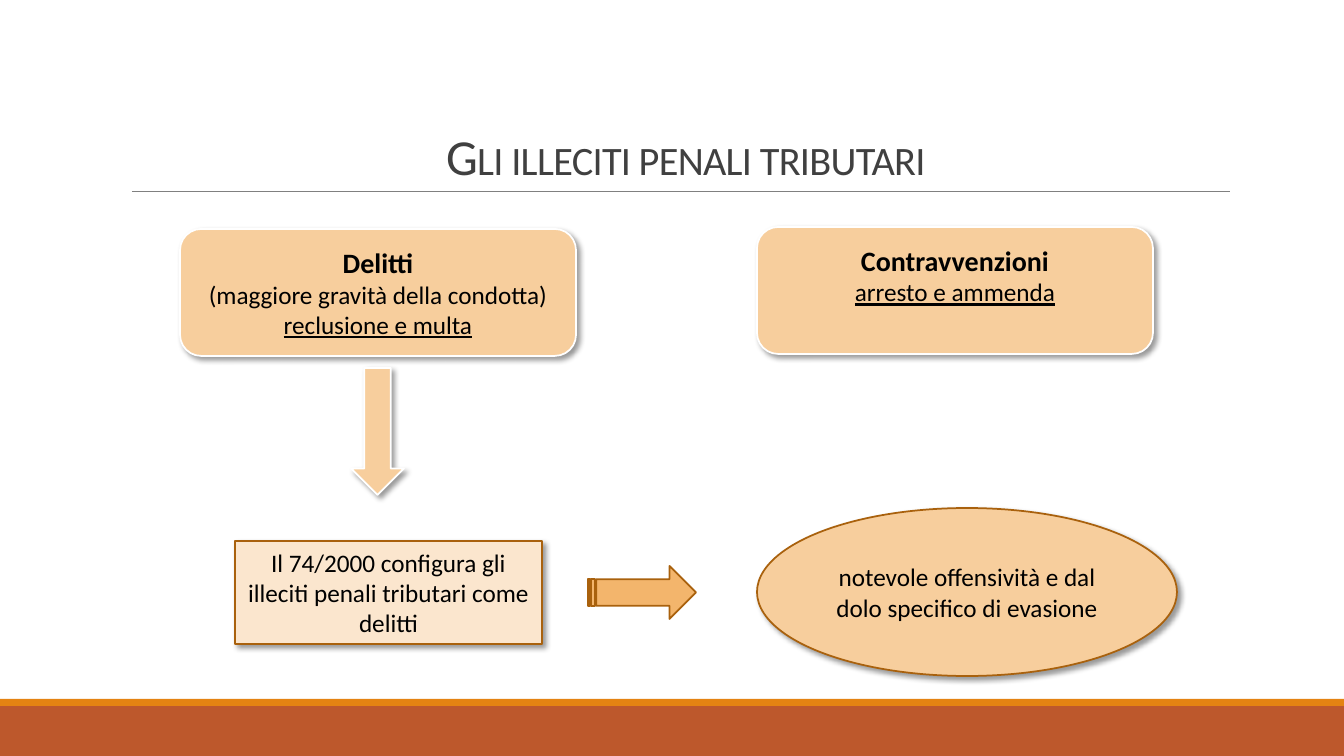
from lxml import etree
from pptx import Presentation
from pptx.dml.color import RGBColor
from pptx.enum import shapes as kinds, text as txt
from pptx.oxml.ns import qn
from pptx.util import Pt

PX = 12192000 / 1344
FONT = "Calibri"
COL = {
    "rust": "BD582C", "orange": "E48312", "rule": "808080", "title": "404040",
    "peach": "F7CE9D", "cream": "FBE6CE", "amber": "F3B56C",
    "brown": "A9610D", "white": "FFFFFF", "black": "000000",
}
GEO = kinds.MSO_SHAPE


def px(n):
    return round(n * PX)


def rgb(name):
    return RGBColor.from_string(COL[name])


def shade(shape):
    """Add a soft shadow at the lower right."""
    fx = shape._element.spPr.find(qn("a:effectLst"))
    drop = etree.SubElement(fx, qn("a:outerShdw"), blurRad=str(Pt(4)),
                            dist=str(Pt(3)), dir="2700000", rotWithShape="0")
    tone = etree.SubElement(drop, qn("a:srgbClr"), val=COL["black"])
    etree.SubElement(tone, qn("a:alpha"), val="40000")


def draw(slide, geo, box, fill, edge=None, shadow=True):
    shape = slide.shapes.add_shape(geo, *map(px, box))
    shape.shadow.inherit = False
    shape.fill.solid()
    shape.fill.fore_color.rgb = rgb(fill)
    if edge:
        shape.line.color.rgb = rgb(edge)
        shape.line.width = Pt(1.25)
    else:
        shape.line.fill.background()
    if shadow:
        shade(shape)
    return shape


def style(par, size, color="black", bold=False, under=False):
    par.alignment = txt.PP_ALIGN.CENTER
    for run in par.runs:
        font = run.font
        font.name, font.size, font.bold = FONT, Pt(size), bold
        font.underline = under
        font.color.rgb = rgb(color)


def footer(slide, box):
    x, y, w, h = box
    band = 7
    draw(slide, GEO.RECTANGLE, (x, y + band, w, h - band), "rust", shadow=False)
    draw(slide, GEO.RECTANGLE, (x, y, w, band), "orange", shadow=False)


def header(slide, box, words):
    x, y, w, h = box
    # Rule under the title
    rule = slide.shapes.add_connector(
        kinds.MSO_CONNECTOR.STRAIGHT, *map(px, (x + 11, y + h, x + w, y + h)))
    rule.line.color.rgb = rgb("rule")
    rule.line.width = Pt(0.5)
    etree.SubElement(rule._element.spPr, qn("a:effectLst"))
    # Title in small capitals
    frame = slide.shapes.add_textbox(*map(px, box)).text_frame
    frame.word_wrap = True
    frame.vertical_anchor = txt.MSO_ANCHOR.BOTTOM
    frame.text = words
    par = frame.paragraphs[0]
    par.line_spacing = 0.85
    style(par, 36, "title")
    props = par.runs[0].font._element
    props.set("cap", "small")
    props.set("spc", "-50")


def card(slide, box, head, note, term, foot=5):
    """Rounded box: bold heading, optional note, underlined penalty."""
    shape = draw(slide, GEO.ROUNDED_RECTANGLE, box, "peach", "white")
    frame = shape.text_frame
    frame.word_wrap = True
    frame.vertical_anchor = txt.MSO_ANCHOR.MIDDLE
    frame.margin_bottom = px(foot)
    frame.text = "\n".join(filter(None, (head, note, term)))
    pars = frame.paragraphs
    for par in pars:
        style(par, 18)
    style(pars[0], 20, bold=True)
    style(pars[-1], 18, under=True)


def label(slide, geo, box, fill, words):
    frame = draw(slide, geo, box, fill, "brown").text_frame
    frame.word_wrap = True
    frame.vertical_anchor = txt.MSO_ANCHOR.MIDDLE
    frame.text = words
    style(frame.paragraphs[0], 18)


def types(slide, box):
    """The two kinds of offence, side by side."""
    x, y, w, h = box
    wide = 396
    card(slide, (x, y + 2, wide, h), "Delitti",
         "(maggiore gravità della condotta)", "reclusione e multa")
    card(slide, (x + w - wide, y, wide, h), "Contravvenzioni", None,
         "arresto e ammenda", foot=36)


def result(slide, box):
    """From the decree to its grounds, with the arrows leading there."""
    x, y, w, h = box
    mid = y + h // 2 + 1
    draw(slide, GEO.DOWN_ARROW, (x + 116, y - 140, 53, 127), "peach", "white")
    label(slide, GEO.RECTANGLE, (x, mid - 52, 307, 103), "cream",
          "Il 74/2000 configura gli illeciti penali tributari come delitti")
    label(slide, GEO.OVAL, (x + w - 420, y, 420, h), "peach",
          "notevole offensività e dal dolo specifico di evasione")
    draw(slide, GEO.STRIPED_RIGHT_ARROW, (x + 353, mid - 27, 108, 53),
         "amber", "brown", shadow=False)


def main():
    deck = Presentation()
    deck.slide_width, deck.slide_height = px(1344), px(756)
    slide = deck.slides.add_slide(deck.slide_layouts[6])
    footer(slide, (0, 699, 1344, 57))
    header(slide, (121, 31, 1109, 160), "Gli illeciti penali tributari")
    types(slide, (180, 227, 973, 127))
    result(slide, (235, 508, 942, 168))
    deck.save("out.pptx")


if __name__ == "__main__":
    main()
